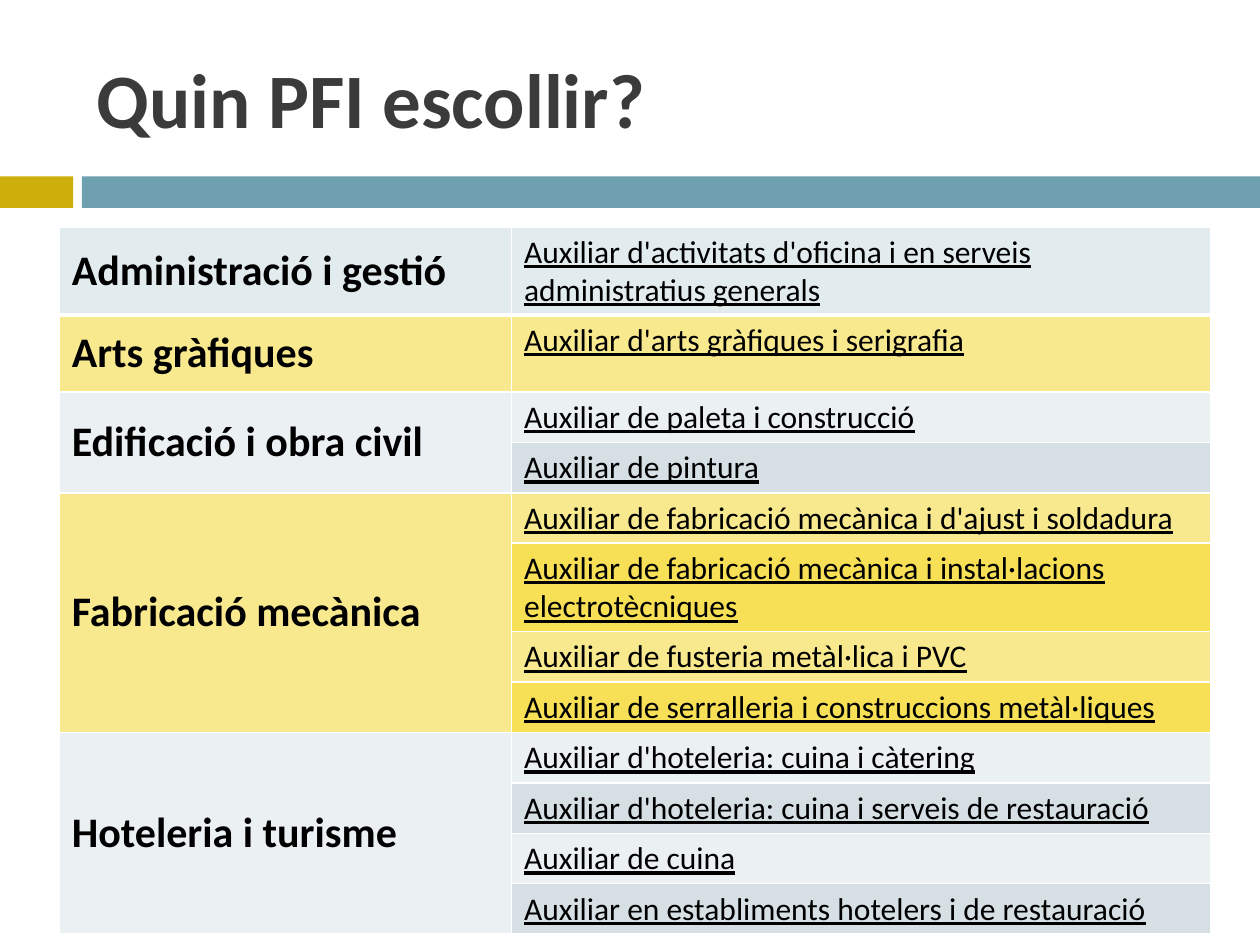
from lxml.etree import SubElement
from pptx import Presentation
from pptx.dml.color import RGBColor as RGB
from pptx.enum.shapes import MSO_SHAPE as Kind
from pptx.enum.text import MSO_ANCHOR as Anchor
from pptx.oxml.ns import qn
from pptx.util import Inches, Pt

HUES = {
    "gold": "CCAF0A", "blue": "6EA0B0", "title": "3B3B3B", "text": "000000",
    "edge": "FFFFFF", "head": "E2ECEF", "pale": "EBF0F2", "grey": "D5DFE4",
    "cream": "F9E98E", "yellow": "F7DF56",
}
COOL, WARM = ("pale", "grey"), ("cream", "yellow")

# family, alternating fills, courses
GROUPS = [
    ("Administració i gestió", ("head",), [
        "Auxiliar d'activitats d'oficina i en serveis administratius generals"]),
    ("Arts gràfiques", WARM, ["Auxiliar d'arts gràfiques i serigrafia"]),
    ("Edificació i obra civil", COOL, [
        "Auxiliar de paleta i construcció",
        "Auxiliar de pintura"]),
    ("Fabricació mecànica", WARM, [
        "Auxiliar de fabricació mecànica i d'ajust i soldadura",
        "Auxiliar de fabricació mecànica i instal·lacions electrotècniques",
        "Auxiliar de fusteria metàl·lica i PVC",
        "Auxiliar de serralleria i construccions metàl·liques"]),
    ("Hoteleria i turisme", COOL, [
        "Auxiliar d'hoteleria: cuina i càtering",
        "Auxiliar d'hoteleria: cuina i serveis de restauració",
        "Auxiliar de cuina",
        "Auxiliar en establiments hotelers i de restauració"]),
]
LINE = 0.38
TALL = {0: 0.66, 1: 0.61, 5: 0.66}


class Deck:
    """Holds the style and the current slide; boxes are shares of its size."""

    font = "Calibri"

    def __init__(self, wide, high):
        self.deck = Presentation()
        self.deck.slide_width = Inches(wide)
        self.deck.slide_height = Inches(high)
        self.slide = self.deck.slides.add_slide(self.deck.slide_layouts[6])

    def box(self, x, y, w, h):
        wide, high = self.deck.slide_width, self.deck.slide_height
        return [round(v) for v in (x * wide, y * high, w * wide, h * high)]

    def paint(self, item, hue):
        item.fill.solid()
        item.fill.fore_color.rgb = RGB.from_string(HUES[hue])

    def label(self, frame, text, size, hue="text", bold=False, under=False):
        frame.text = text
        frame.word_wrap = True
        font = frame.paragraphs[0].runs[0].font
        font.name, font.size = self.font, Pt(size)
        font.bold, font.underline = bold, under
        font.color.rgb = RGB.from_string(HUES[hue])

    def bar(self, place, hue):
        bar = self.slide.shapes.add_shape(Kind.RECTANGLE, *self.box(*place))
        bar.shadow.inherit = False
        bar.line.fill.background()
        self.paint(bar, hue)

    def title(self, place, text):
        frame = self.slide.shapes.add_textbox(*self.box(*place)).text_frame
        self.label(frame, text, 44, "title", bold=True)
        frame.vertical_anchor = Anchor.MIDDLE

    def edge(self, cell, base):
        """Draws white cell borders, with the bottom one of the given width."""
        props = cell._tc.get_or_add_tcPr()
        for side, width in (("L", 1), ("R", 1), ("T", 1), ("B", base)):
            line = SubElement(props, qn(f"a:ln{side}"), w=str(Pt(width)))
            fill = SubElement(line, qn("a:solidFill"))
            SubElement(fill, qn("a:srgbClr"), val=HUES["edge"])

    def table(self, place, left, groups):
        """Draws one merged family cell beside the courses of each group."""
        count = sum(len(names) for _, _, names in groups)
        frame = self.slide.shapes.add_table(count, 2, *self.box(*place))
        grid, wide, high = frame.table, frame.width, frame.height
        grid.columns[0].width = round(wide * left)
        grid.columns[1].width = wide - grid.columns[0].width
        row = 0
        for family, hues, names in groups:
            head = grid.cell(row, 0)
            for i, name in enumerate(names):
                grid.rows[row].height = Inches(TALL.get(row, LINE))
                for col, hue in enumerate((hues[0], hues[i % len(hues)])):
                    cell = grid.cell(row, col)
                    self.edge(cell, 1 if row else 3)
                    self.paint(cell, hue)
                self.label(grid.cell(row, 1).text_frame, name, 18, under=True)
                row += 1
            if len(names) > 1:
                head.merge(grid.cell(row - 1, 0))
            self.label(head.text_frame, family, 24, bold=True)
            head.vertical_anchor = Anchor.MIDDLE
        frame.height = high


def main():
    page = Deck(10, 7.5)
    page.bar((0, 1.4 / 7.5, 0.058, 0.25 / 7.5), "gold")
    page.bar((0.065, 1.4 / 7.5, 0.935, 0.25 / 7.5), "blue")
    page.title((0.067, 0.04, 0.883, 0.95 / 7.5), "Quin PFI escollir?")
    page.table((0.047, 0.24, 0.914, 5.61 / 7.5), 3.59 / 9.14, GROUPS)
    page.deck.save("out.pptx")


if __name__ == "__main__":
    main()
